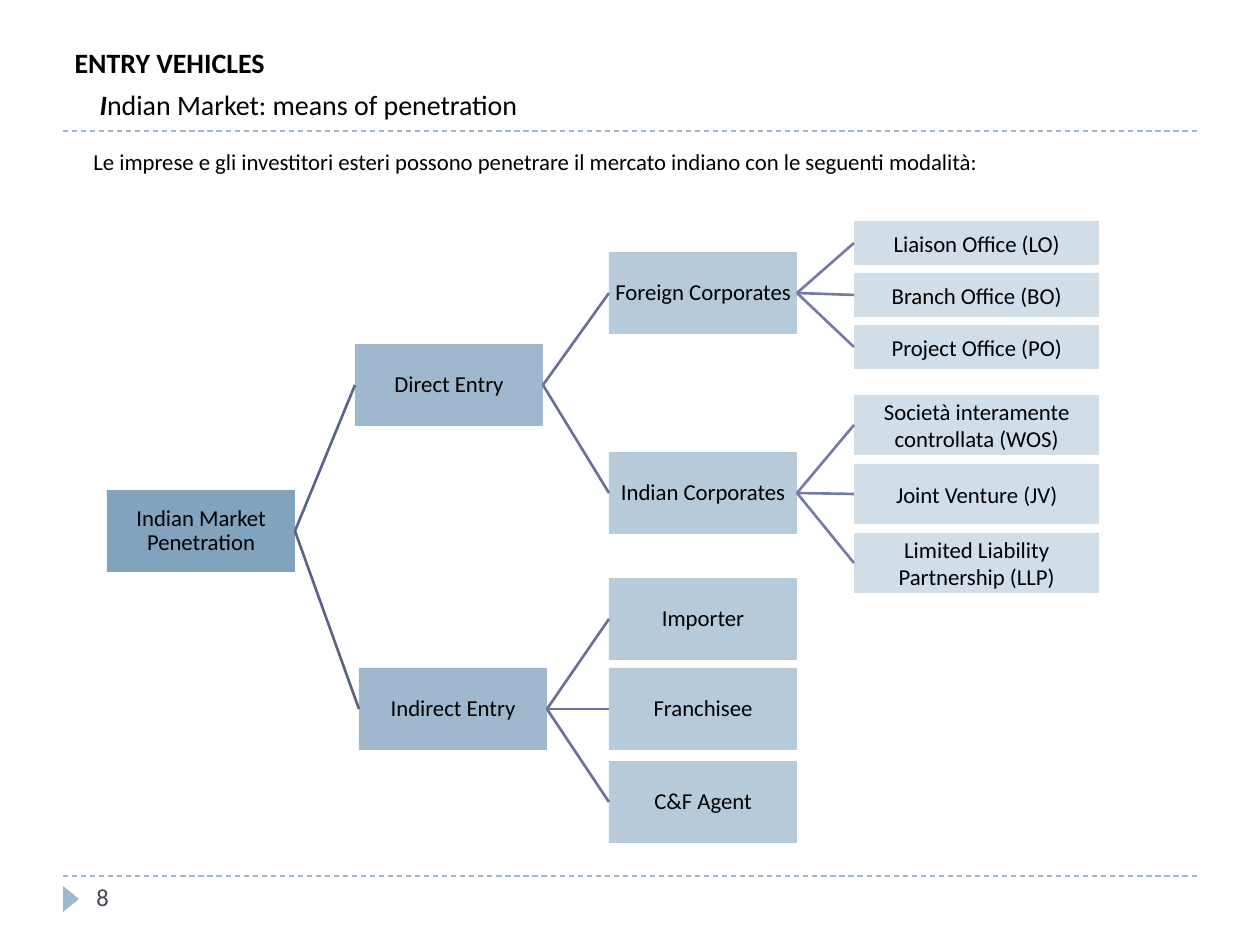
from dataclasses import dataclass

from lxml.etree import SubElement
from pptx import Presentation
from pptx.dml.color import RGBColor as RGB
from pptx.enum.dml import MSO_LINE
from pptx.enum.shapes import MSO_CONNECTOR, MSO_SHAPE
from pptx.enum.text import MSO_ANCHOR, MSO_AUTO_SIZE, PP_ALIGN
from pptx.oxml.ns import qn
from pptx.util import Pt

PX = 914400 / 126


@dataclass(frozen=True)
class Theme:
    font: str = "Calibri"
    ink: str = "000000"
    number_ink: str = "464653"
    accent: str = "9FB8CD"
    root: str = "638CAE"
    links: tuple = ("5B6383", "677194", "727CA3")
    title_size: int = 16
    text_size: int = 13
    number_size: int = 14


theme = Theme()


def px(*lengths):
    return [round(n * PX) for n in lengths]


def style(p, size, color=theme.ink):
    for r in p.runs:
        r.font.name = theme.font
        r.font.size = Pt(size)
        r.font.color.rgb = RGB.from_string(color)


prs = Presentation()
prs.slide_width, prs.slide_height = px(1260, 945)
s = prs.slides.add_slide(prs.slide_layouts[5])
shapes = s.shapes

# Title
title = shapes.title
title.left, title.top, title.width, title.height = px(62, 11, 1105, 136)
tf = title.text_frame
tf.auto_size = MSO_AUTO_SIZE.NONE
tf.vertical_anchor = MSO_ANCHOR.MIDDLE
p = tf.paragraphs[0]
p.alignment = PP_ALIGN.LEFT
p.line_spacing = Pt(24)
hang = px(25)[0]
pPr = p._p.get_or_add_pPr()
pPr.set("marL", str(hang))
pPr.set("indent", str(-hang))
heading, initial, rest = p.add_run(), None, None
heading.text = "ENTRY VEHICLES"
p.add_line_break()
initial, rest = p.add_run(), p.add_run()
initial.text = "I"
rest.text = "ndian Market: means of penetration"
style(p, theme.title_size)
heading.font.bold = initial.font.bold = initial.font.italic = True
rest.font.bold = False

# Dashed rules
for y in (131, 876):
    rule = shapes.add_connector(MSO_CONNECTOR.STRAIGHT, *px(63, y, 1197, y))
    rule.line.color.rgb = RGB.from_string(theme.accent)
    rule.line.width = Pt(0.75)
    rule.line.dash_style = MSO_LINE.DASH
    SubElement(rule._element.spPr, qn("a:effectLst"))

# Footer marker and number
marker = shapes.add_shape(MSO_SHAPE.ISOSCELES_TRIANGLE, *px(58, 891, 26, 16))
marker.rotation = 90
marker.shadow.inherit = False
marker.fill.solid()
marker.fill.fore_color.rgb = RGB.from_string(theme.accent)
marker.line.fill.background()

number = shapes.add_textbox(*px(84, 876, 273, 50))
number.text_frame.text = "8"
style(number.text_frame.paragraphs[0], theme.number_size, theme.number_ink)

# Introduction
intro = shapes.add_textbox(*px(81, 141, 1125, 39))
tf = intro.text_frame
tf.word_wrap = True
tf.text = "Le imprese e gli investitori esteri possono penetrare il mercato indiano con le seguenti modalità:"
p = tf.paragraphs[0]
p.alignment = PP_ALIGN.JUSTIFY
p.line_spacing = Pt(16)
style(p, theme.text_size)

# Tree: fill, opacity in percent and box width for each level
levels = [(theme.root, 80, 188), (theme.accent, 100, 188),
          (theme.accent, 74, 188), (theme.accent, 47, 245)]
# Text, parent, level, left, top, height
nodes = [
    ("Indian Market Penetration", None, 0, 107, 490, 82),
    ("Direct Entry", "Indian Market Penetration", 1, 355, 344, 82),
    ("Indirect Entry", "Indian Market Penetration", 1, 359, 668, 82),
    ("Foreign Corporates", "Direct Entry", 2, 609, 252, 82),
    ("Indian Corporates", "Direct Entry", 2, 609, 452, 82),
    ("Importer", "Indirect Entry", 2, 609, 578, 82),
    ("Franchisee", "Indirect Entry", 2, 609, 668, 82),
    ("C&F Agent", "Indirect Entry", 2, 609, 761, 82),
]
leaf_groups = [
    ("Foreign Corporates", 221, 44, 52,
     ["Liaison Office (LO)", "Branch Office (BO)", "Project Office (PO)"]),
    ("Indian Corporates", 395, 60, 69,
     ["Società interamente controllata (WOS)", "Joint Venture (JV)",
      "Limited Liability Partnership (LLP)"]),
]
for parent, top, height, pitch, names in leaf_groups:
    for i, name in enumerate(names):
        nodes.append((name, parent, 3, 854, top + i * pitch, height))

boxes = {}
for name, parent, level, left, top, height in nodes:
    color, opacity, width = levels[level]
    sp = boxes[name] = shapes.add_shape(MSO_SHAPE.RECTANGLE, *px(left, top, width, height))
    sp.shadow.inherit = False
    sp.line.fill.background()
    sp.fill.solid()
    sp.fill.fore_color.rgb = RGB.from_string(color)
    if opacity < 100:
        clr = sp._element.spPr.find(qn("a:solidFill"))[0]
        SubElement(clr, qn("a:alpha"), val=str(opacity * 1000))
    tf = sp.text_frame
    tf.word_wrap = True
    tf.vertical_anchor = MSO_ANCHOR.MIDDLE
    tf.text = name
    p = tf.paragraphs[0]
    p.alignment = PP_ALIGN.CENTER
    if level < 3:
        tf.margin_left = tf.margin_right = tf.margin_top = tf.margin_bottom = px(1)[0]
        p.line_spacing = 0.9
    style(p, theme.text_size)
    if parent:
        link = shapes.add_connector(MSO_CONNECTOR.STRAIGHT, 0, 0, 0, 0)
        link.begin_connect(boxes[parent], 3)
        link.end_connect(sp, 1)
        link.line.color.rgb = RGB.from_string(theme.links[level - 1])
        link.line.width = Pt(1.5)
        SubElement(link._element.spPr, qn("a:effectLst"))

prs.save("out.pptx")
